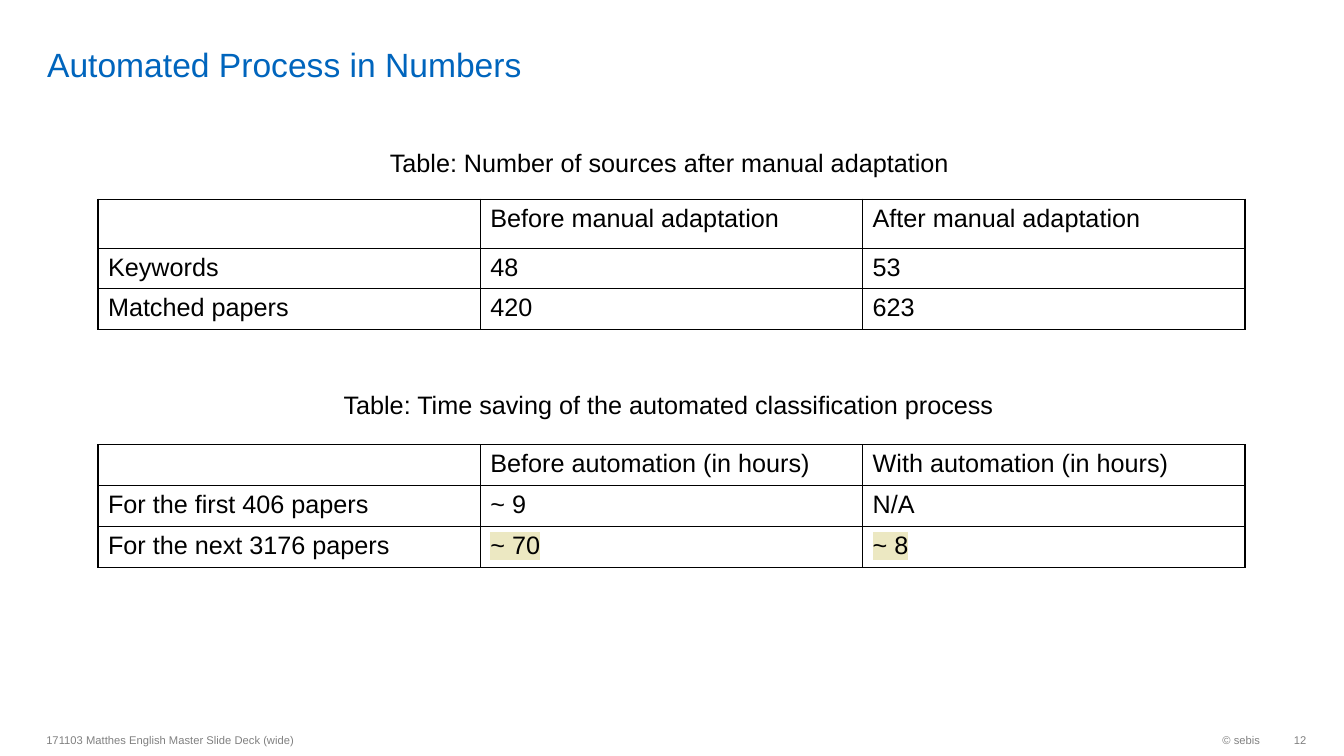
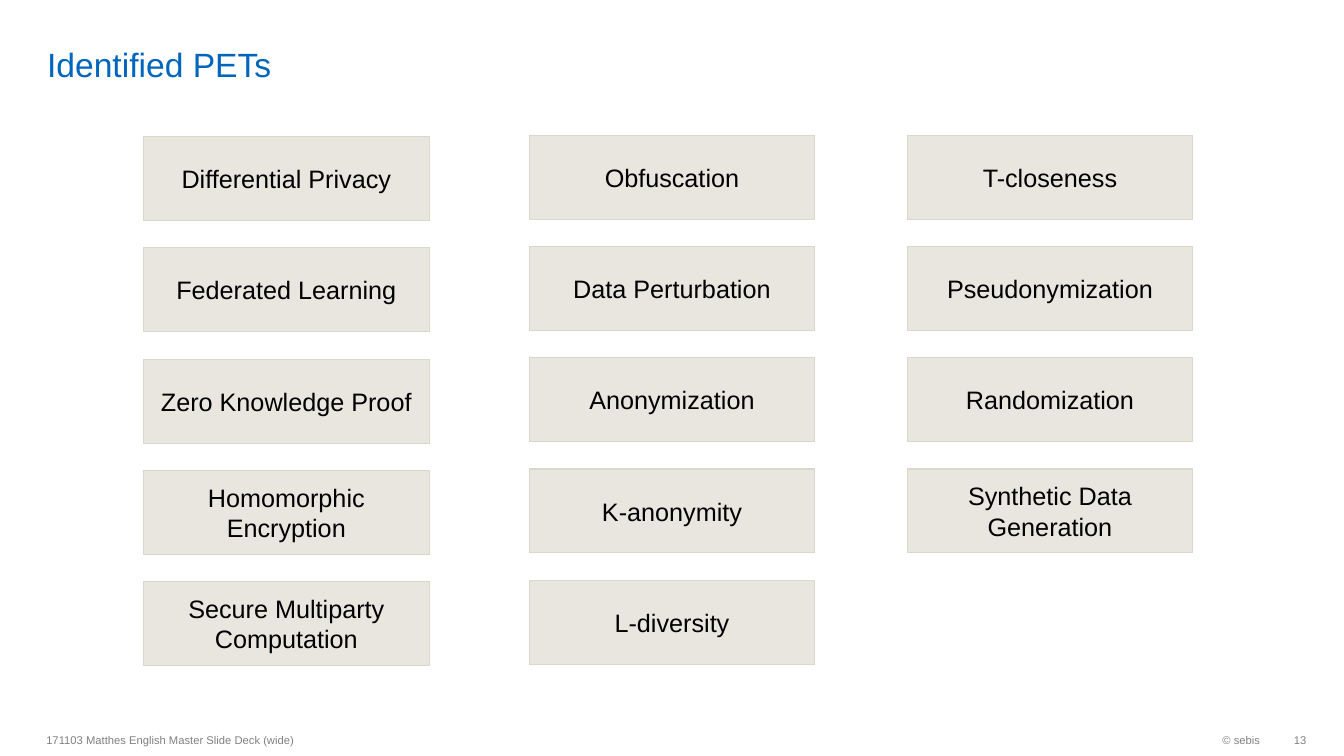
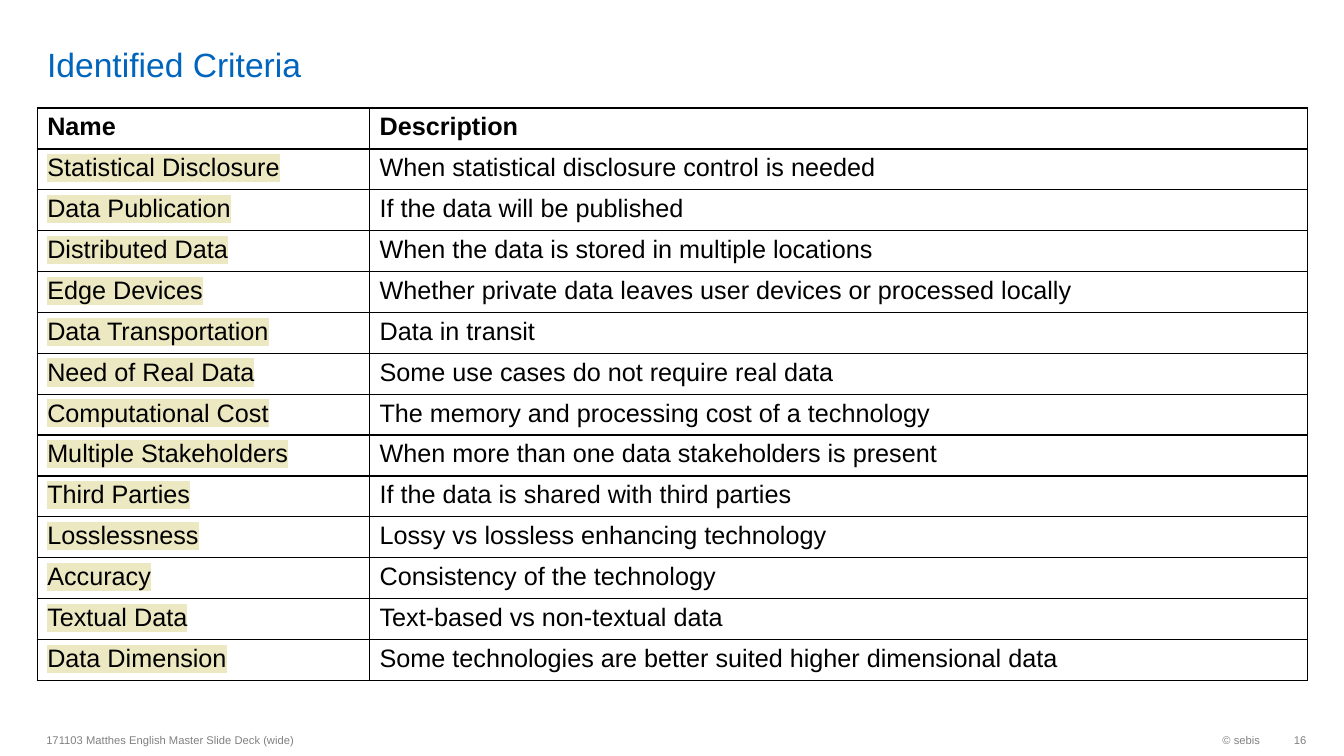
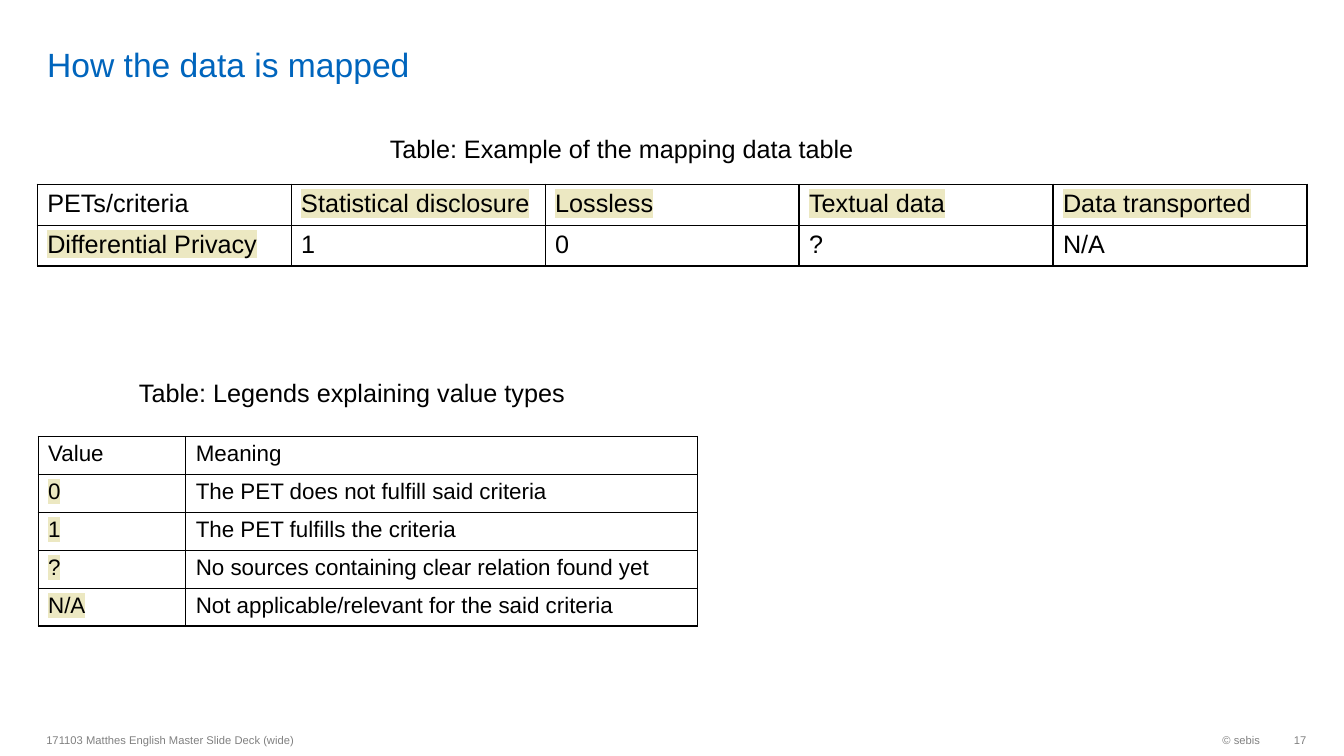
from itertools import accumulate, repeat
from lxml.etree import SubElement
from pptx import Presentation
from pptx.dml.color import RGBColor
from pptx.enum.shapes import MSO_SHAPE
from pptx.enum.text import MSO_ANCHOR, PP_ALIGN
from pptx.oxml.ns import qn
from pptx.util import Pt

BLACK, BLUE, GREY = "000000", "0065BD", "808080"
CARD, CARD_EDGE, MARKER = "E8E6DF", "DAD7CB", "ECE8C2"

BODY = {"name": "Arial", "size": Pt(18), "bold": False}
SMALL = BODY | {"size": Pt(16)}
HEADING = BODY | {"size": Pt(24)}
FOOTER = BODY | {"size": Pt(8)}

TITLE_FRAME = {"vertical_anchor": MSO_ANCHOR.BOTTOM, "word_wrap": True,
               "margin_top": 0, "margin_bottom": 0}
CAPTION_FRAME = {"word_wrap": False}
NOTE_FRAME = {"vertical_anchor": MSO_ANCHOR.MIDDLE, "word_wrap": True}
MARK_FRAME = {"vertical_anchor": MSO_ANCHOR.MIDDLE, "word_wrap": False}
NUMBER_FRAME = MARK_FRAME | {"margin_right": 0}

DECK_NAME = "171103 Matthes English Master Slide Deck (wide)"
COPYRIGHT = "© sebis"

CRITERIA = [
    ("Name", "Description"),
    ("Statistical Disclosure", "When statistical disclosure control is needed"),
    ("Data Publication", "If the data will be published"),
    ("Distributed Data", "When the data is stored in multiple locations"),
    ("Edge Devices", "Whether private data leaves user devices or processed locally"),
    ("Data Transportation", "Data in transit"),
    ("Need of Real Data", "Some use cases do not require real data"),
    ("Computational Cost", "The memory and processing cost of a technology"),
    ("Multiple Stakeholders", "When more than one data stakeholders is present"),
    ("Third Parties", "If the data is shared with third parties"),
    ("Losslessness", "Lossy vs lossless enhancing technology"),
    ("Accuracy", "Consistency of the technology"),
    ("Textual Data", "Text-based vs non-textual data"),
    ("Data Dimension", "Some technologies are better suited higher dimensional data"),
]
VALUE_TYPES = [
    ("Value", "Meaning"),
    ("0", "The PET does not fulfill said criteria"),
    ("1", "The PET fulfills the criteria"),
    ("?", "No sources containing clear relation found yet"),
    ("N/A", "Not applicable/relevant for the said criteria"),
]

PAGES = [
    {
        "title": "Automated Process in Numbers", "number": 12,
        "captions": [
            ("Table: Number of sources after manual adaptation", (271.4, 101.5, 417.6)),
            ("Table: Time saving of the automated classification process",
             (238.3, 274.3, 483)),
        ],
        "tables": [
            {"at": (70, 142.3), "columns": [273.1] * 3, "heights": [35.2, 27.8, 27.8],
             "rows": [("", "Before manual adaptation", "After manual adaptation"),
                      ("Keywords", "48", "53"),
                      ("Matched papers", "420", "623")]},
            {"at": (70, 317.7), "columns": [273.1] * 3, "heights": [29.2] * 3,
             "rows": [("", "Before automation (in hours)", "With automation (in hours)"),
                      ("For the first 406 papers", "~ 9", "N/A"),
                      ("For the next 3176 papers", "~ 70", "~ 8")],
             "marked": {(2, 1), (2, 2)}},
        ],
    },
    {
        "title": "Identified PETs", "number": 13,
        "card_columns": [
            ((102.5, 97.5), ["Differential Privacy", "Federated Learning",
                             "Zero Knowledge Proof", "Homomorphic Encryption",
                             "Secure Multiparty Computation"]),
            ((378, 96.5), ["Obfuscation", "Data Perturbation", "Anonymization",
                           "K-anonymity", "L-diversity"]),
            ((648, 96.5), ["T-closeness", "Pseudonymization", "Randomization",
                           "Synthetic Data Generation"]),
        ],
    },
    {
        "title": "Identified Criteria", "number": 16,
        "tables": [
            {"at": (26.6, 77.2), "columns": [237.4, 669.8],
             "heights": [29.2] * len(CRITERIA), "rows": CRITERIA, "bold_header": True,
             "marked": {(row, 0) for row in range(1, len(CRITERIA))}},
        ],
    },
    {
        "title": "How the data is mapped", "number": 17,
        "captions": [
            ("Table: Example of the mapping data table", (271.4, 91.4, 348.5)),
            ("Table: Legends explaining value types", (92.2, 266.2, 321.8)),
        ],
        "tables": [
            {"at": (26.6, 131.6), "columns": [181.4] * 5, "heights": [29.2] * 2,
             "rows": [("PETs/criteria", "Statistical disclosure", "Lossless",
                       "Textual data", "Data transported"),
                      ("Differential Privacy", "1", "0", "?", "N/A")],
             "marked": {(1, 0)} | {(0, column) for column in range(1, 5)}},
            {"at": (27.2, 311.7), "columns": [105.5, 365.5],
             "heights": [27.1] * len(VALUE_TYPES), "rows": VALUE_TYPES, "font": SMALL,
             "marked": {(row, 0) for row in range(1, len(VALUE_TYPES))}},
        ],
    },
]

CARD_WIDTH, CARD_HEIGHT, CARD_PITCH = 204, 60, 79.5


def color(value):
    return RGBColor.from_string(value)


def apply(target, values):
    for name, value in values.items():
        setattr(target, name, value)


def write(frame, text, font, ink=BLACK, align=PP_ALIGN.LEFT):
    paragraph = frame.paragraphs[0]
    paragraph.alignment = align
    run = paragraph.add_run()
    run.text = text
    apply(run.font, font)
    run.font.color.rgb = color(ink)
    return run


def add_label(slide, text, at, font, frame_values, ink=BLACK, align=PP_ALIGN.LEFT):
    frame = slide.shapes.add_textbox(*map(Pt, at)).text_frame
    apply(frame, frame_values)
    write(frame, text, font, ink, align)


def highlight(run):
    marker = SubElement(run.font._element, qn("a:highlight"))
    SubElement(marker, qn("a:srgbClr"), val=MARKER)
    run.font._element.find(qn("a:solidFill")).addnext(marker)


def outline(cell):
    properties = cell._tc.get_or_add_tcPr()
    for position, side in enumerate(("lnL", "lnR", "lnT", "lnB")):
        edge = SubElement(properties, qn(f"a:{side}"), w=str(Pt(1)))
        SubElement(SubElement(edge, qn("a:solidFill")), qn("a:srgbClr"), val=BLACK)
        properties.insert(position, edge)


def add_grid(slide, at, columns, heights, rows, marked=(), font=BODY, bold_header=False):
    size = sum(columns), sum(heights)
    table = slide.shapes.add_table(len(rows), len(columns), *map(Pt, at + size)).table
    apply(table, {"first_row": False, "horz_banding": False})
    for column, width in zip(table.columns, columns):
        column.width = Pt(width)
    for row, height in zip(table.rows, heights):
        row.height = Pt(height)
    for row, texts in enumerate(rows):
        for column, text in enumerate(texts):
            cell = table.cell(row, column)
            cell.fill.background()
            outline(cell)
            if text:
                bold = bold_header and row == 0
                run = write(cell.text_frame, text, font | {"bold": bold})
                if (row, column) in marked:
                    highlight(run)


def add_card(slide, text, left, top):
    card = slide.shapes.add_shape(
        MSO_SHAPE.RECTANGLE, *map(Pt, (left, top, CARD_WIDTH, CARD_HEIGHT)))
    card.shadow.inherit = False
    card.fill.solid()
    card.fill.fore_color.rgb = color(CARD)
    card.line.color.rgb = color(CARD_EDGE)
    card.line.width = Pt(0.75)
    apply(card.text_frame, NOTE_FRAME)
    write(card.text_frame, text, BODY, align=PP_ALIGN.CENTER)


def add_page(deck, page):
    slide = deck.slides.add_slide(deck.slide_layouts[6])
    add_label(slide, page["title"], (26.6, 3.6, 833.8, 56.9), HEADING, TITLE_FRAME, BLUE)
    add_label(slide, DECK_NAME, (26, 517.2, 453.6, 23), FOOTER, NOTE_FRAME, GREY)
    add_label(slide, COPYRIGHT, (738.7, 517.4, 168.5, 23), FOOTER, MARK_FRAME, GREY,
              PP_ALIGN.RIGHT)
    add_label(slide, str(page["number"]), (907.2, 517.4, 26, 23), FOOTER, NUMBER_FRAME,
              GREY, PP_ALIGN.RIGHT)
    for text, at in page.get("captions", []):
        add_label(slide, text, at + (29.1,), BODY, CAPTION_FRAME)
    for table in page.get("tables", []):
        add_grid(slide, **table)
    for (left, first_top), names in page.get("card_columns", []):
        tops = accumulate(repeat(CARD_PITCH), initial=first_top)
        for name, top in zip(names, tops):
            add_card(slide, name, left, top)


def main():
    deck = Presentation()
    apply(deck, {"slide_width": Pt(960), "slide_height": Pt(540)})
    for page in PAGES:
        add_page(deck, page)
    deck.save("out.pptx")


if __name__ == "__main__":
    main()
